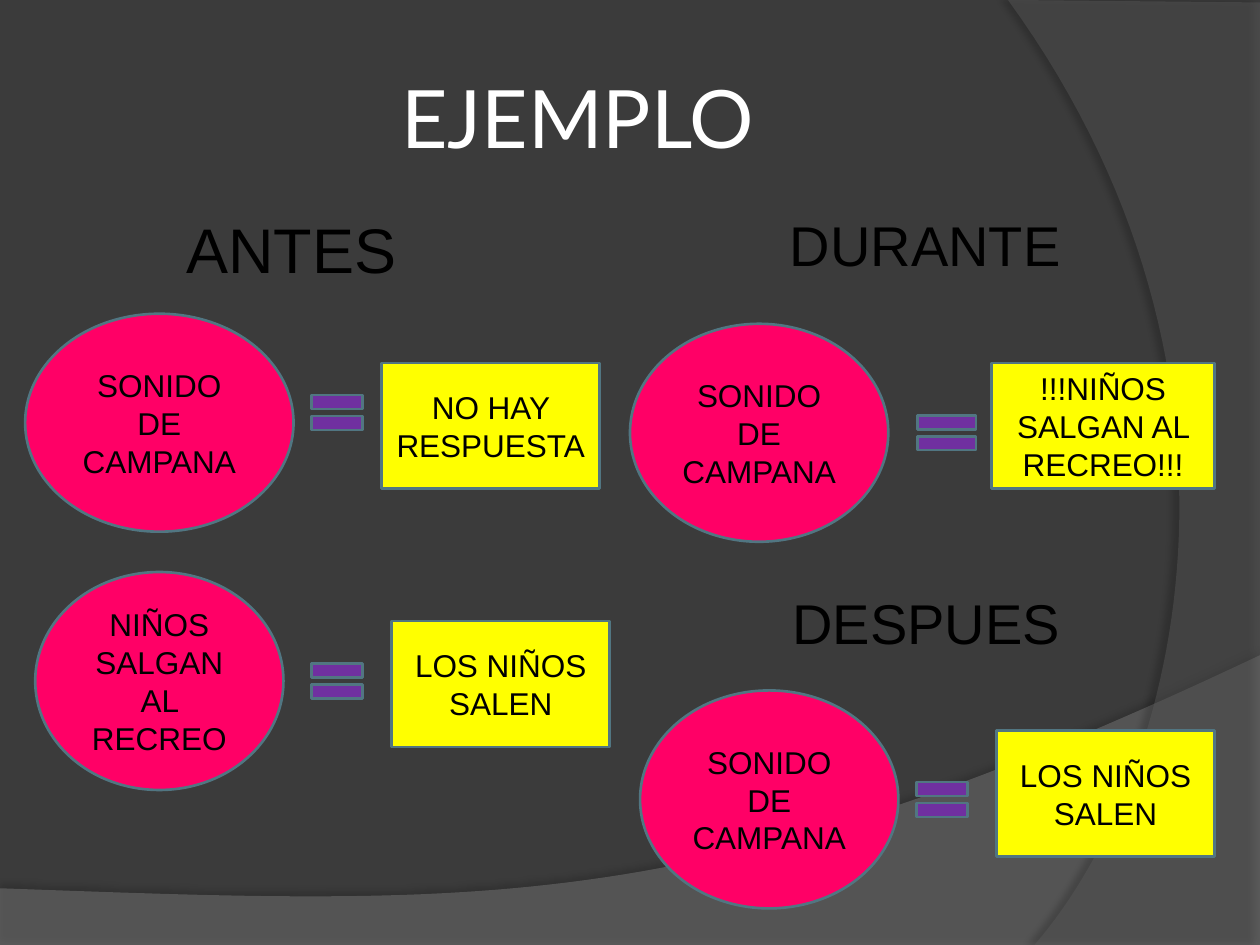
import lxml.etree
import pptx
import pptx.dml.color
import pptx.enum.shapes
import pptx.enum.text
import pptx.oxml.ns
import pptx.util

Inches = pptx.util.Inches
Pt = pptx.util.Pt
Kind = pptx.enum.shapes.MSO_SHAPE
Align = pptx.enum.text.PP_ALIGN
Anchor = pptx.enum.text.MSO_ANCHOR
qn = pptx.oxml.ns.qn

COLORS = {
    "back": "3B3B3B",
    "wave": "7F7F7F",
    "arc": "5E5E5E",
    "pink": "FF0066",
    "yellow": "FFFF00",
    "purple": "7030A0",
    "edge": "517682",
    "white": "FFFFFF",
    "black": "000000",
}


def color(name):
    return pptx.dml.color.RGBColor.from_string(COLORS[name])


def curve(start, pull, push, end, steps=60):
    points = []
    for step in range(steps + 1):
        t = step / steps
        parts = ((1 - t) ** 3, 3 * t * (1 - t) ** 2, 3 * t * t * (1 - t), t ** 3)
        points.append(tuple(
            sum(part * spot[axis] for part, spot in zip(parts, (start, pull, push, end)))
            for axis in (0, 1)
        ))
    return points


class Board:
    font = "Arial"
    size = 18
    edge = 1.5

    def __init__(self, deck):
        self.slide = deck.slides.add_slide(deck.slide_layouts[5])
        self.shapes = self.slide.shapes
        fill = self.slide.background.fill
        fill.solid()
        fill.fore_color.rgb = color("back")

    def words(self, frame, text, size, name="black", font=None, align=Align.CENTER):
        frame.text = text
        line = frame.paragraphs[0]
        line.alignment = align
        line.font.name = font or self.font
        line.font.size = Pt(size)
        line.font.color.rgb = color(name)

    def title(self, text, box):
        shape = self.shapes.title
        shape.left, shape.top, shape.width, shape.height = map(Inches, box)
        frame = shape.text_frame
        frame.vertical_anchor = Anchor.MIDDLE
        frame.margin_left = frame.margin_right = Inches(0.05)
        self.words(frame, text, 46, "white", "Lato")

    def band(self, points, fill, alpha, shade, blur, gap, turn):
        spots = [(Inches(x), Inches(y)) for x, y in points]
        draft = self.shapes.build_freeform(*spots[0], scale=1.0)
        draft.add_line_segments(spots[1:], close=True)
        shape = draft.convert_to_shape()
        shape.line.fill.background()
        shape.fill.solid()
        shape.fill.fore_color.rgb = color(fill)
        shape.shadow.inherit = False
        props = shape.element.spPr
        tint = props.find(qn("a:solidFill"))[0]
        lxml.etree.SubElement(tint, qn("a:alpha"), val=str(alpha * 1000))
        glow = lxml.etree.SubElement(
            props.find(qn("a:effectLst")), qn("a:outerShdw"),
            blurRad=str(Pt(blur)), dist=str(Pt(gap)), dir=str(turn * 60000),
            algn="ctr", rotWithShape="0")
        dark = lxml.etree.SubElement(glow, qn("a:srgbClr"), val=COLORS["black"])
        lxml.etree.SubElement(dark, qn("a:alpha"), val=str(shade * 1000))

    def shape(self, kind, box, fill, text=None):
        shape = self.shapes.add_shape(kind, *map(Inches, box))
        shape.shadow.inherit = False
        shape.fill.solid()
        shape.fill.fore_color.rgb = color(fill)
        shape.line.color.rgb = color("edge")
        shape.line.width = Pt(self.edge)
        if text:
            shape.text_frame.vertical_anchor = Anchor.MIDDLE
            self.words(shape.text_frame, text, self.size)

    def cause(self, text, left, top, width):
        self.shape(Kind.OVAL, (left, top, width, 1.73), "pink", text)

    def result(self, text, left, top, width):
        self.shape(Kind.RECTANGLE, (left, top, width, 1), "yellow", text)

    def equal(self, left, top, width):
        self.shape(Kind.MATH_EQUAL, (left, top, width, 0.47), "purple")

    def label(self, text, box, size):
        frame = self.shapes.add_textbox(*map(Inches, box)).text_frame
        frame.word_wrap = False
        frame.auto_size = pptx.enum.text.MSO_AUTO_SIZE.SHAPE_TO_FIT_TEXT
        self.words(frame, text, size, align=Align.LEFT)


def main():
    deck = pptx.Presentation()
    deck.slide_width = Inches(10)
    deck.slide_height = Inches(7.5)
    board = Board(deck)

    wave = curve((10, 5.2), (5.59, 7.29), (3.91, 7.19), (0, 7.05))
    board.band([(0, 7.51), (10, 7.51)] + wave, "wave", 45, 35, 4, 3.5, 270)
    arc = curve((8.21, 7.5), (9.35, 6.19), (10.18, 3), (8, 0))
    board.band([(10, 0.02), (10, 7.5)] + arc, "arc", 40, 45, 4, 4, 180)
    board.title("EJEMPLO", (0.5, 0.3, 8.17, 1.25))

    bell = "SONIDO DE CAMPANA"
    leave = "LOS NIÑOS SALEN"
    rows = [
        ((bell, 0.2, 2.49, 2.13), (2.4, 3.04, 0.55),
         ("NO HAY RESPUESTA", 3.03, 2.88, 1.73)),
        (("NIÑOS SALGAN AL RECREO", 0.28, 4.54, 1.97), (2.4, 5.17, 0.55),
         (leave, 3.11, 4.93, 1.73)),
        ((bell, 5, 2.57, 2.05), (7.2, 3.2, 0.63),
         ("!!!NIÑOS SALGAN AL RECREO!!!", 7.87, 2.88, 1.77)),
        ((bell, 5.08, 5.48, 2.05), (7.2, 6.11, 0.55),
         (leave, 7.91, 5.8, 1.73)),
    ]
    for cause, equal, result in rows:
        board.cause(*cause)
        board.equal(*equal)
        board.result(*result)

    board.label("ANTES", (1.38, 1.62, 1.88, 0.71), 36)
    board.label("DURANTE", (6.17, 1.62, 2.37, 0.64), 32)
    board.label("DESPUES", (6.19, 4.62, 2.35, 0.64), 32)
    deck.save("out.pptx")


if __name__ == "__main__":
    main()
